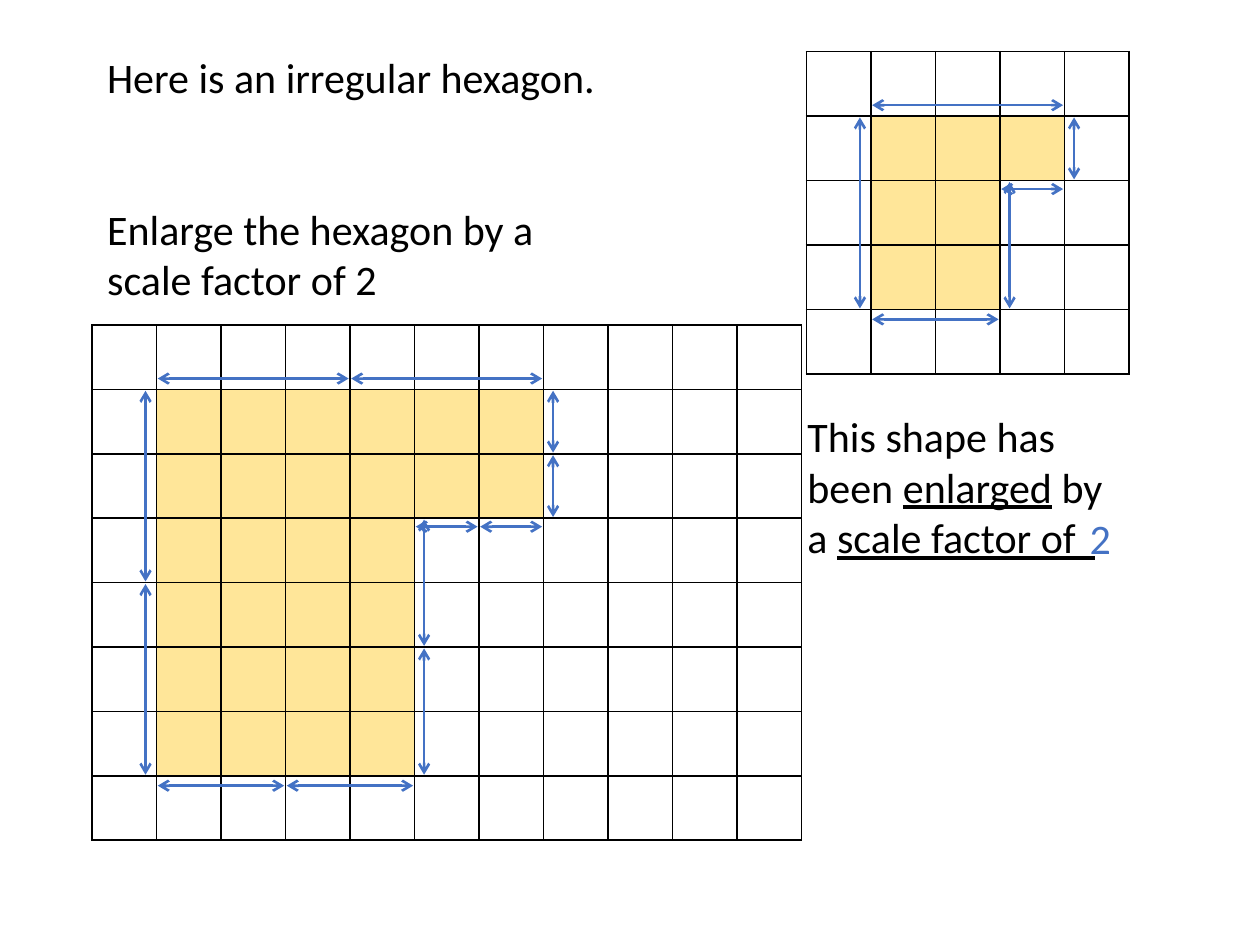
from dataclasses import dataclass
from itertools import product

from lxml.etree import SubElement
from pptx import Presentation
from pptx.dml.color import RGBColor
from pptx.enum.shapes import MSO_CONNECTOR
from pptx.enum.text import MSO_ANCHOR, PP_ALIGN
from pptx.oxml import parse_xml
from pptx.oxml.ns import nsdecls, qn
from pptx.util import Inches, Pt


@dataclass(frozen=True)
class Theme:
    font: str = "Calibri"
    size: int = 24
    ink: str = "000000"
    paper: str = "FFFFFF"
    shade: str = "FFE699"
    arrow: str = "4472C4"
    stroke: float = 1.5
    rule: float = 1


@dataclass(frozen=True)
class Box:
    left: float
    top: float
    width: float
    height: float

    def spot(self, col, row):
        return self.left + int(self.width * col), self.top + int(self.height * row)


THEME = Theme()
COLS, ROWS = 100, 75
WIDTH, HEIGHT = Inches(10), Inches(7.5)

EDGES = [
    ("down", 0, 0, 3, -0.17),
    ("across", 0, 0, 3, -0.17),
    ("down", 3, 0, 1, 0.15),
    ("across", 1, 2, 3, 0.13),
    ("down", 2, 1, 3, 0.15),
    ("across", 3, 0, 2, 0.15),
]


def place(col, row, wide, high):
    unit = WIDTH / COLS, HEIGHT / ROWS
    return Box(int(col * unit[0]), int(row * unit[1]),
               int(wide * unit[0]), int(high * unit[1]))


def write(par, text, color=THEME.ink, size=THEME.size, under=False):
    run = par.add_run()
    run.text = text
    font = run.font
    font.name, font.size, font.underline = THEME.font, Pt(size), under
    font.color.rgb = RGBColor.from_string(color)


def frame(shape, box, wrap=True):
    shape.left, shape.top = box.left, box.top
    shape.width, shape.height = box.width, box.height
    body = shape.text_frame
    body.word_wrap = wrap
    body.vertical_anchor = MSO_ANCHOR.TOP
    return body


def prompt(slide, box):
    body = frame(slide.shapes.title, box)
    lines = [
        ("Here is an irregular hexagon.", 0),
        ("Enlarge the hexagon by a", 58),
        ("scale factor of 2", 0),
    ]
    for index, (text, gap) in enumerate(lines):
        par = body.add_paragraph() if index else body.paragraphs[0]
        par.alignment = PP_ALIGN.LEFT
        if gap:
            par.space_before = Pt(gap)
        write(par, text)


def result(slide, box):
    body = frame(slide.shapes.add_textbox(0, 0, 0, 0), box)
    par = body.paragraphs[0]
    write(par, "This shape has been ")
    write(par, "enlarged", under=True)
    write(par, " by a ")
    write(par, "scale factor of  ", under=True)


def factor(slide, box):
    body = frame(slide.shapes.add_textbox(0, 0, 0, 0), box, wrap=False)
    write(body.paragraphs[0], "2", color=THEME.arrow)


def border(cell):
    props = cell._tc.get_or_add_tcPr()
    for index, side in enumerate("LRTB"):
        props.insert(index, parse_xml(
            f'<a:ln{side} {nsdecls("a")} w="{Pt(THEME.rule)}"><a:solidFill>'
            f'<a:srgbClr val="{THEME.ink}"/></a:solidFill></a:ln{side}>'))


def inside(col, row, scale):
    across, down = (col - 1) // scale, (row - 1) // scale
    return 0 <= down < 3 and 0 <= across < (3 if down == 0 else 2)


def base(col, row):
    return THEME.paper if 1 <= row <= 3 and 1 <= col <= 9 else None


def large(col, row):
    return THEME.shade if inside(col, row, 2) else None


def small(col, row):
    if inside(col, row, 1):
        return THEME.shade
    return THEME.paper if row in (0, 4) or (col == 3 and row > 1) else None


def grid(slide, box, cols, rows, paint):
    table = slide.shapes.add_table(
        rows, cols, box.left, box.top, box.width, box.height).table
    table.first_row = table.horz_banding = False
    for col in table.columns:
        col.width = box.width // cols
    for row in table.rows:
        row.height = box.height // rows
    for row, col in product(range(rows), range(cols)):
        cell, color = table.cell(row, col), paint(col, row)
        if color:
            cell.fill.solid()
            cell.fill.fore_color.rgb = RGBColor.from_string(color)
        else:
            cell.fill.background()
        border(cell)


def arrow(slide, start, end):
    line = slide.shapes.add_connector(MSO_CONNECTOR.STRAIGHT, *start, *end)
    line.line.color.rgb = RGBColor.from_string(THEME.arrow)
    line.line.width = Pt(THEME.stroke)
    stroke = line.line._get_or_add_ln()
    for tip in ("headEnd", "tailEnd"):
        SubElement(stroke, qn(f"a:{tip}"), type="arrow")
    SubElement(line._element.spPr, qn("a:effectLst"))


def measure(slide, box, scale, inset=0.02):
    for axis, level, start, end, gap in EDGES:
        fixed = 1 + level * scale + gap
        length = end - start
        for part in range(scale):
            low = 1 + start * scale + part * length
            span = low + inset, low + length - inset
            ends = [(at, fixed) if axis == "across" else (fixed, at) for at in span]
            arrow(slide, *(box.spot(*point) for point in ends))


def figure(slide, box, cols, rows, scale, paints):
    for paint in paints:
        grid(slide, box, cols, rows, paint)
    cell = Box(box.left, box.top, box.width / cols, box.height / rows)
    measure(slide, cell, scale)


def main():
    deck = Presentation()
    deck.slide_width, deck.slide_height = WIDTH, HEIGHT
    slide = deck.slides.add_slide(deck.slide_layouts[5])
    figure(slide, place(7.3, 25.8, 56.3, 40.9), 11, 8, 2, [base, large])
    prompt(slide, place(7.5, 3.6, 41.6, 21.2))
    figure(slide, place(64, 4.1, 25.6, 25.6), 5, 5, 1, [small])
    result(slide, place(63.1, 32.1, 25.8, 13.1))
    factor(slide, place(85.5, 40.2, 3.7, 5))
    deck.save("out.pptx")


if __name__ == "__main__":
    main()
